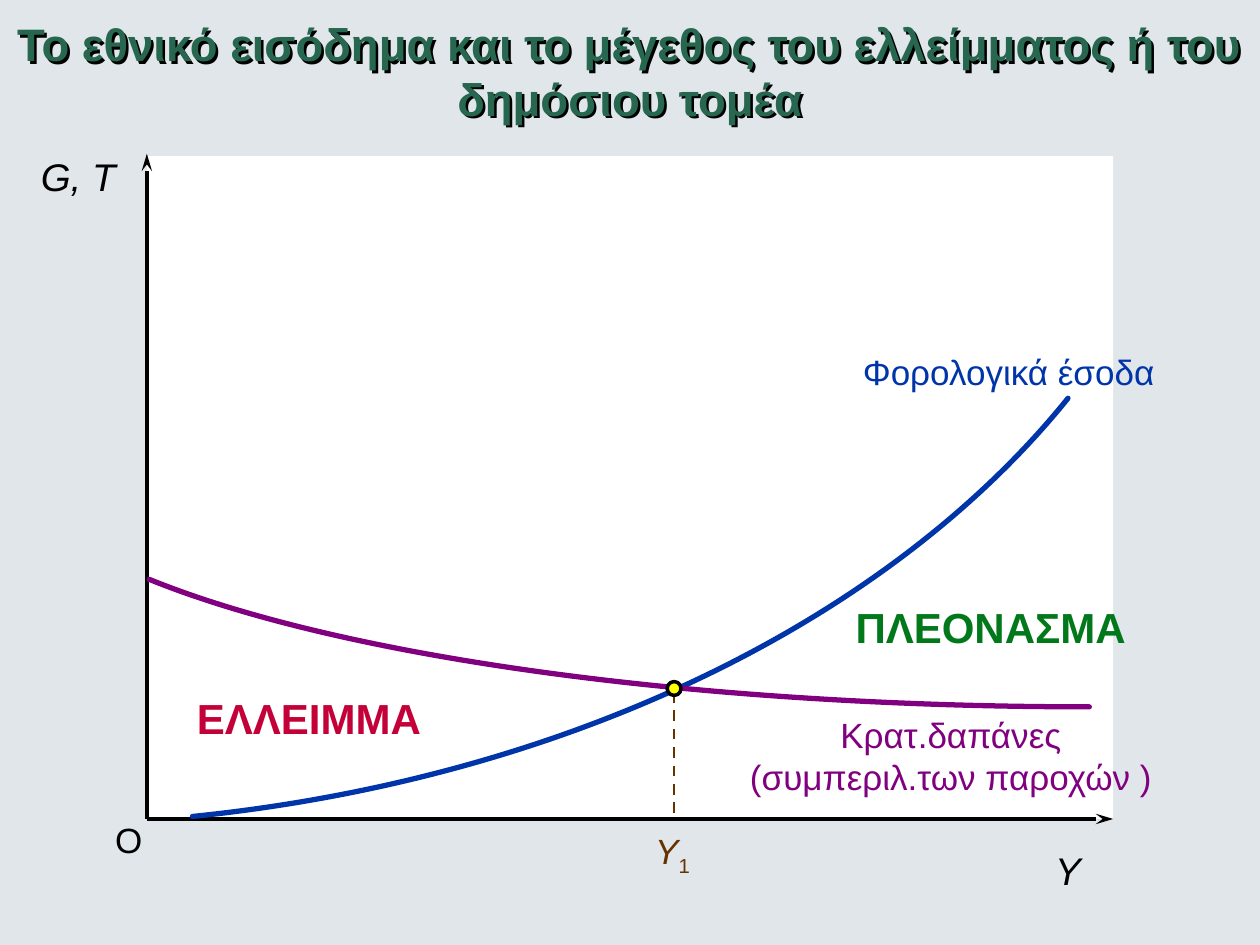
from lxml.etree import SubElement
from pptx import Presentation
from pptx.dml.color import RGBColor
from pptx.enum.dml import MSO_LINE
from pptx.enum.shapes import MSO_CONNECTOR, MSO_SHAPE
from pptx.enum.text import MSO_AUTO_SIZE, PP_ALIGN
from pptx.oxml import parse_xml
from pptx.oxml.ns import nsdecls, qn
from pptx.util import Cm, Pt

COLORS = {
    "background": "E0E6EA",
    "plot": "FFFFFF",
    "axis": "000000",
    "title": "276750",
    "revenue": "0035AA",
    "spending": "800080",
    "income": "663300",
    "point": "FFFF00",
    "deficit": "C40038",
    "surplus": "01791B",
}


def color(name):
    return RGBColor.from_string(COLORS[name])


def add_text(slide, box, text, size, color_name, align=PP_ALIGN.CENTER,
             bold=False, italic=False, wrap=False):
    shape = slide.shapes.add_textbox(*(Cm(length) for length in box))
    text_frame = shape.text_frame
    text_frame.text = text
    text_frame.word_wrap = wrap
    text_frame.auto_size = MSO_AUTO_SIZE.SHAPE_TO_FIT_TEXT
    for paragraph in text_frame.paragraphs:
        paragraph.alignment = align
        for run in paragraph.runs:
            style_run(run, size, color_name, bold, italic)
    return shape


def style_run(run, size, color_name, bold=False, italic=False):
    run.font.name = "Arial"
    run.font.size = Pt(size)
    run.font.bold = bold
    run.font.italic = italic
    run.font.color.rgb = color(color_name)


def add_line(slide, start, end, color_name, width, arrow=False):
    line = slide.shapes.add_connector(
        MSO_CONNECTOR.STRAIGHT, *(Cm(length) for length in (*start, *end)))
    line.line.color.rgb = color(color_name)
    line.line.width = Pt(width)
    SubElement(line._element.spPr, qn("a:effectLst"))
    if arrow:
        SubElement(line.line._get_or_add_ln(), qn("a:tailEnd"),
                   type="stealth", w="med", len="lg")
    return line


def add_curve(slide, points, color_name):
    """Draw one cubic Bézier curve: start, two control points, end."""
    start, *others = [(Cm(x), Cm(y)) for x, y in points]
    builder = slide.shapes.build_freeform(*start)
    builder.add_line_segments(others, close=False)
    shape = builder.convert_to_shape()
    shape.shadow.inherit = False
    shape.fill.background()
    shape.line.color.rgb = color(color_name)
    shape.line.width = Pt(3)
    SubElement(shape.line._get_or_add_ln(), qn("a:round"))
    shape.line._get_or_add_ln().set("cap", "rnd")

    # The builder makes straight segments only: join them into one curve.
    outline = next(shape._element.iter(qn("a:path")))
    segments = outline.findall(qn("a:lnTo"))
    curve = SubElement(outline, qn("a:cubicBezTo"))
    for segment in segments:
        curve.append(segment[0])
        outline.remove(segment)


def add_title(slide, left, top, width, height):
    shape = add_text(
        slide, (left, top, width, height),
        "Το εθνικό εισόδημα και το μέγεθος του ελλείμματος ή του δημόσιου τομέα",
        26, "title", bold=True, wrap=True)
    # The box has no fill, so its shadow falls from the letters.
    shape._element.spPr.append(parse_xml(
        f'<a:effectLst {nsdecls("a")}>'
        '<a:outerShdw dist="25400" dir="2700000" algn="tl" rotWithShape="0">'
        '<a:srgbClr val="000000"/></a:outerShdw></a:effectLst>'))


def add_diagram(slide, left, top, width, height):
    def place(x, y):
        return left + x, top + y

    def label(x, y, label_width, label_height, *args, **kwargs):
        return add_text(slide, (*place(x, y), label_width, label_height),
                        *args, **kwargs)

    plot = slide.shapes.add_shape(
        MSO_SHAPE.RECTANGLE, Cm(left), Cm(top), Cm(width), Cm(height))
    plot.shadow.inherit = False
    plot.fill.solid()
    plot.fill.fore_color.rgb = color("plot")
    plot.line.fill.background()

    # Axes
    label(-0.89, 13.23, 1.07, 1.09, "O", 20, "axis", PP_ALIGN.LEFT)
    label(-2.41, -0.18, 2.03, 1.19, "G, T", 22, "axis", PP_ALIGN.RIGHT, italic=True)
    label(18.06, 13.81, 1.02, 1.19, "Y", 22, "axis", PP_ALIGN.RIGHT, italic=True)
    origin = place(0, height)
    add_line(slide, origin, place(0, -0.05), "axis", 2, arrow=True)
    add_line(slide, origin, place(width, height), "axis", 2, arrow=True)

    # Curves
    revenue = [(18.57, 4.88), (14.91, 9.42), (8.38, 12.55), (0.92, 13.31)]
    spending = [(19, 11.1), (11.2, 11.1), (3.99, 10.13), (0.05, 8.53)]
    for points, name in ((revenue, "revenue"), (spending, "spending")):
        add_curve(slide, [place(x, y) for x, y in points], name)
    label(14.15, 3.8, 6.45, 1.12, "Φορολογικά έσοδα", 20, "revenue")
    label(11.88, 11.1, 8.66, 1.96, "Κρατ.δαπάνες\n(συμπεριλ.των παροχών )",
          20, "spending")

    # Balanced budget
    x, y, diameter = 10.63, 10.73, 0.28
    drop = add_line(slide, place(x, y + 0.07), place(x, height), "income", 1.5)
    drop.line.dash_style = MSO_LINE.DASH
    income = label(9.98, 13.45, 1.24, 1.09, "Y", 20, "income", italic=True)
    subscript = income.text_frame.paragraphs[0].add_run()
    subscript.text = "1"
    style_run(subscript, 20, "income")
    subscript._r.get_or_add_rPr().set("baseline", "-25000")
    point_left, point_top = place(x - diameter / 2, y - diameter / 2)
    point = slide.shapes.add_shape(
        MSO_SHAPE.OVAL, Cm(point_left), Cm(point_top), Cm(diameter), Cm(diameter))
    point.shadow.inherit = False
    point.fill.solid()
    point.fill.fore_color.rgb = color("point")
    point.line.color.rgb = color("axis")
    point.line.width = Pt(2)

    # Areas between the curves
    label(0.73, 10.69, 5.08, 1.3, "ΕΛΛΕΙΜΜΑ", 24, "deficit", bold=True)
    label(14, 8.86, 6.02, 1.3, "ΠΛΕΟΝΑΣΜΑ", 24, "surplus", bold=True)


def main():
    presentation = Presentation()
    presentation.slide_width = Cm(25.4)
    presentation.slide_height = Cm(19.05)
    slide = presentation.slides.add_slide(presentation.slide_layouts[6])
    slide.background.fill.solid()
    slide.background.fill.fore_color.rgb = color("background")
    add_diagram(slide, 2.96, 3.15, 19.48, 13.36)
    add_title(slide, 0, 0.2, 25.4, 2.49)
    presentation.save("out.pptx")


if __name__ == "__main__":
    main()
